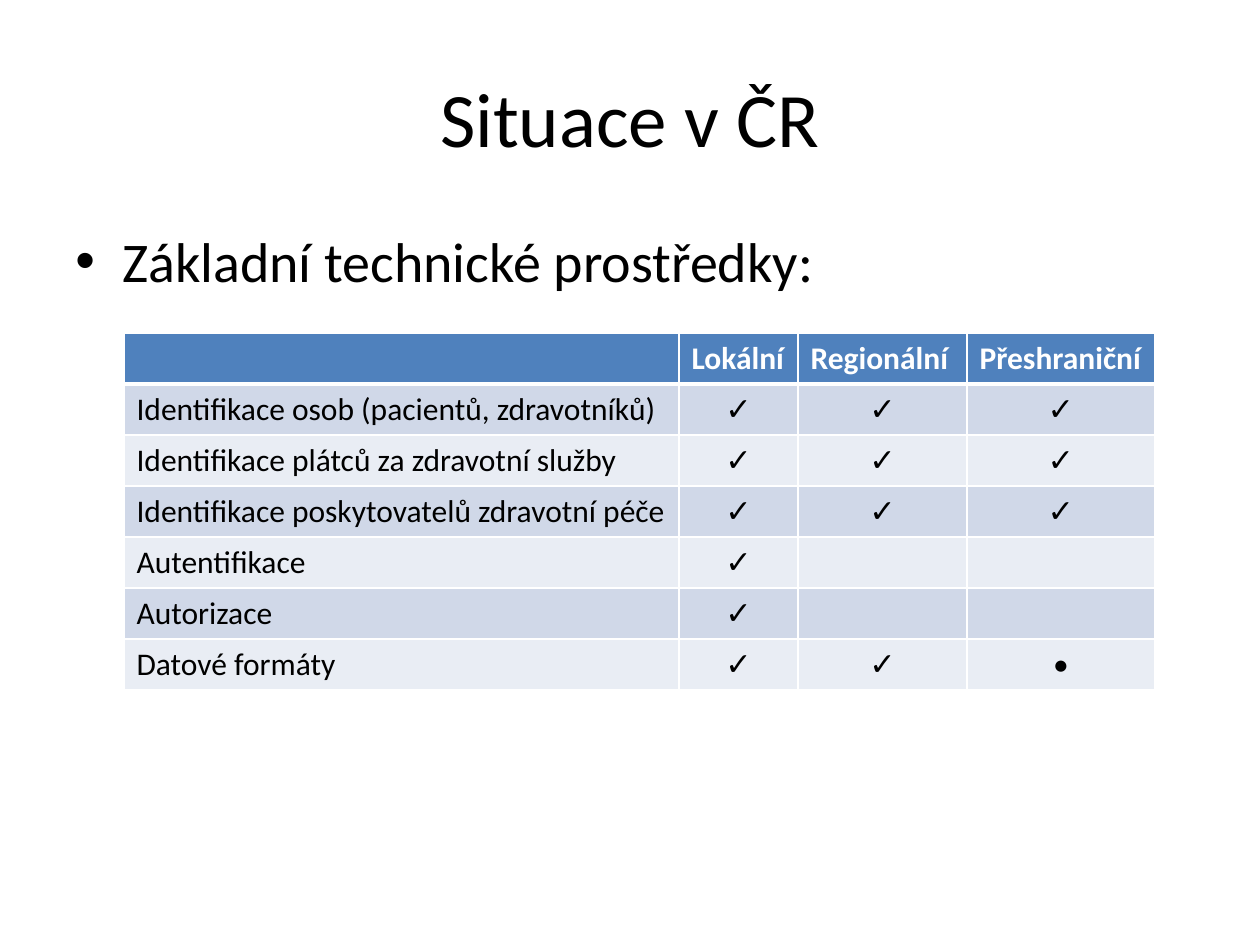
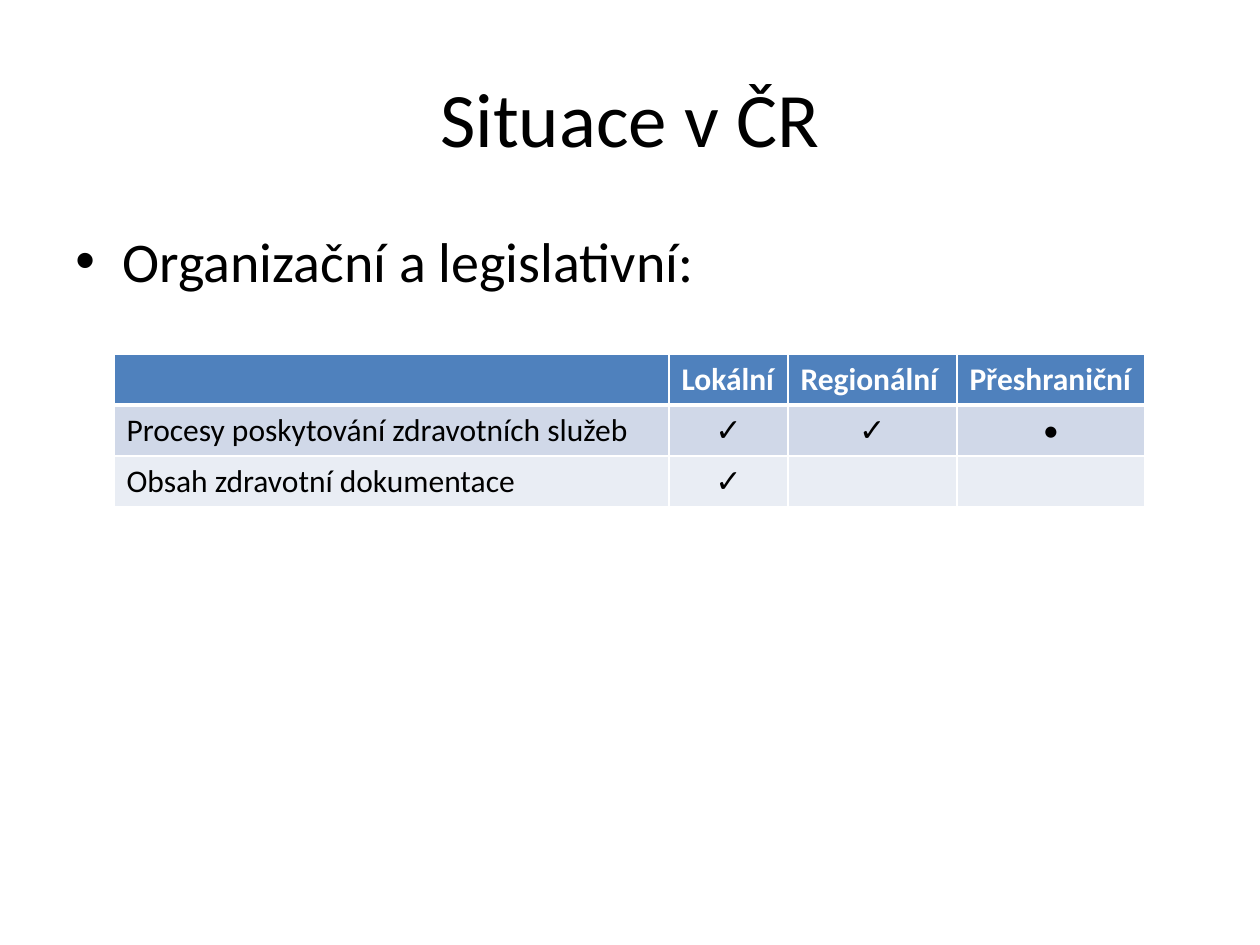
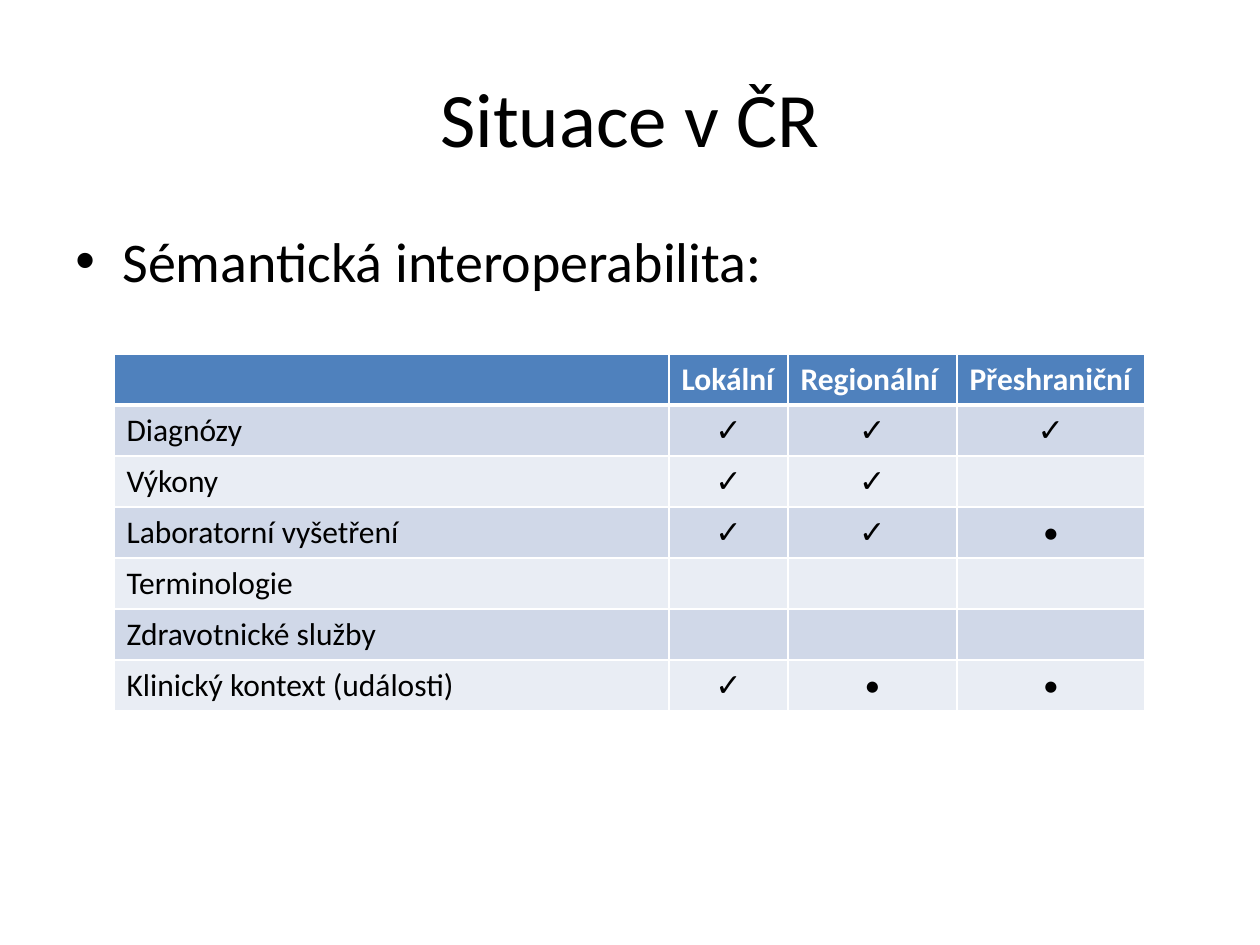
from lxml.etree import SubElement
from pptx import Presentation
from pptx.dml.color import RGBColor
from pptx.enum.text import MSO_ANCHOR, PP_ALIGN
from pptx.oxml.ns import qn
from pptx.util import Emu, Pt

FONT = "Calibri"
BLACK = RGBColor(0x00, 0x00, 0x00)
WHITE = RGBColor(0xFF, 0xFF, 0xFF)
HEADER_BLUE = RGBColor(0x4F, 0x81, 0xBD)
BANDS = (RGBColor(0xD0, 0xD8, 0xE8), RGBColor(0xE9, 0xED, 0xF4))

TITLE = "Situace v ČR"
HEADINGS = ("", "Lokální", "Regionální", "Přeshraniční")
COLUMN_WIDTHS = (555, 119, 169, 188)
ROW_HEIGHT = 51
BULLET_INDENT = 47

TOPICS = (
    ("Základní technické prostředky:", (124, 333), (
        ("Identifikace osob (pacientů, zdravotníků)", "✓", "✓", "✓"),
        ("Identifikace plátců za zdravotní služby", "✓", "✓", "✓"),
        ("Identifikace poskytovatelů zdravotní péče", "✓", "✓", "✓"),
        ("Autentifikace", "✓", "", ""),
        ("Autorizace", "✓", "", ""),
        ("Datové formáty", "✓", "✓", "•"),
    )),
    ("Organizační a legislativní:", (114, 354), (
        ("Procesy poskytování zdravotních služeb", "✓", "✓", "•"),
        ("Obsah zdravotní dokumentace", "✓", "", ""),
    )),
    ("Sémantická interoperabilita:", (114, 354), (
        ("Diagnózy", "✓", "✓", "✓"),
        ("Výkony", "✓", "✓", ""),
        ("Laboratorní vyšetření", "✓", "✓", "•"),
        ("Terminologie", "", "", ""),
        ("Zdravotnické služby", "", "", ""),
        ("Klinický kontext (události)", "✓", "•", "•"),
    )),
)


def px(length):
    return Emu(round(length * 914400 / 126))


def add_run(paragraph, text, size, color=BLACK, bold=False):
    run = paragraph.add_run()
    run.text = text
    run.font.name = FONT
    run.font.size = Pt(size)
    run.font.bold = bold
    run.font.color.rgb = color


def add_text_frame(slide, left, top, width, height):
    frame = slide.shapes.add_textbox(px(left), px(top), px(width), px(height)).text_frame
    frame.word_wrap = True
    return frame


def add_title(slide):
    frame = add_text_frame(slide, 63, 38, 1134, 157)
    frame.vertical_anchor = MSO_ANCHOR.MIDDLE
    paragraph = frame.paragraphs[0]
    paragraph.alignment = PP_ALIGN.CENTER
    add_run(paragraph, TITLE, 44)


def add_topic(slide, topic):
    paragraph = add_text_frame(slide, 63, 220, 1134, 624).paragraphs[0]
    paragraph.space_before = Pt(6.4)
    properties = paragraph._p.get_or_add_pPr()
    properties.set("marL", str(px(BULLET_INDENT)))
    properties.set("indent", str(-px(BULLET_INDENT)))
    SubElement(properties, qn("a:buFont"), typeface="Arial")
    SubElement(properties, qn("a:buChar"), char="•")
    add_run(paragraph, topic, 32)


def add_borders(cell, top, bottom):
    properties = cell._tc.get_or_add_tcPr()
    for side, points in (("L", 1), ("R", 1), ("T", top), ("B", bottom)):
        line = SubElement(properties, qn(f"a:ln{side}"), w=str(Pt(points)))
        fill = SubElement(line, qn("a:solidFill"))
        SubElement(fill, qn("a:srgbClr"), val=str(WHITE))


def fill_cell(cell, text, row, column):
    is_header = row == 0
    add_borders(cell, 3 if row == 1 else 1, 3 if is_header else 1)
    cell.fill.solid()
    cell.fill.fore_color.rgb = HEADER_BLUE if is_header else BANDS[(row - 1) % 2]
    paragraph = cell.text_frame.paragraphs[0]
    if not is_header and column > 0:
        paragraph.alignment = PP_ALIGN.CENTER
    if text:
        add_run(paragraph, text, 18, WHITE if is_header else BLACK, is_header)


def add_readiness_table(slide, position, records):
    rows = (HEADINGS, *records)
    left, top = position
    table = slide.shapes.add_table(
        len(rows), len(HEADINGS), px(left), px(top),
        px(sum(COLUMN_WIDTHS)), px(ROW_HEIGHT * len(rows)),
    ).table
    for column, width in zip(table.columns, COLUMN_WIDTHS):
        column.width = px(width)
    for row, texts in enumerate(rows):
        table.rows[row].height = px(ROW_HEIGHT)
        for column, text in enumerate(texts):
            fill_cell(table.cell(row, column), text, row, column)


def main():
    presentation = Presentation()
    presentation.slide_width = px(1260)
    presentation.slide_height = px(945)
    for topic, position, records in TOPICS:
        slide = presentation.slides.add_slide(presentation.slide_layouts[6])
        add_title(slide)
        add_topic(slide, topic)
        add_readiness_table(slide, position, records)
    presentation.save("out.pptx")


if __name__ == "__main__":
    main()
